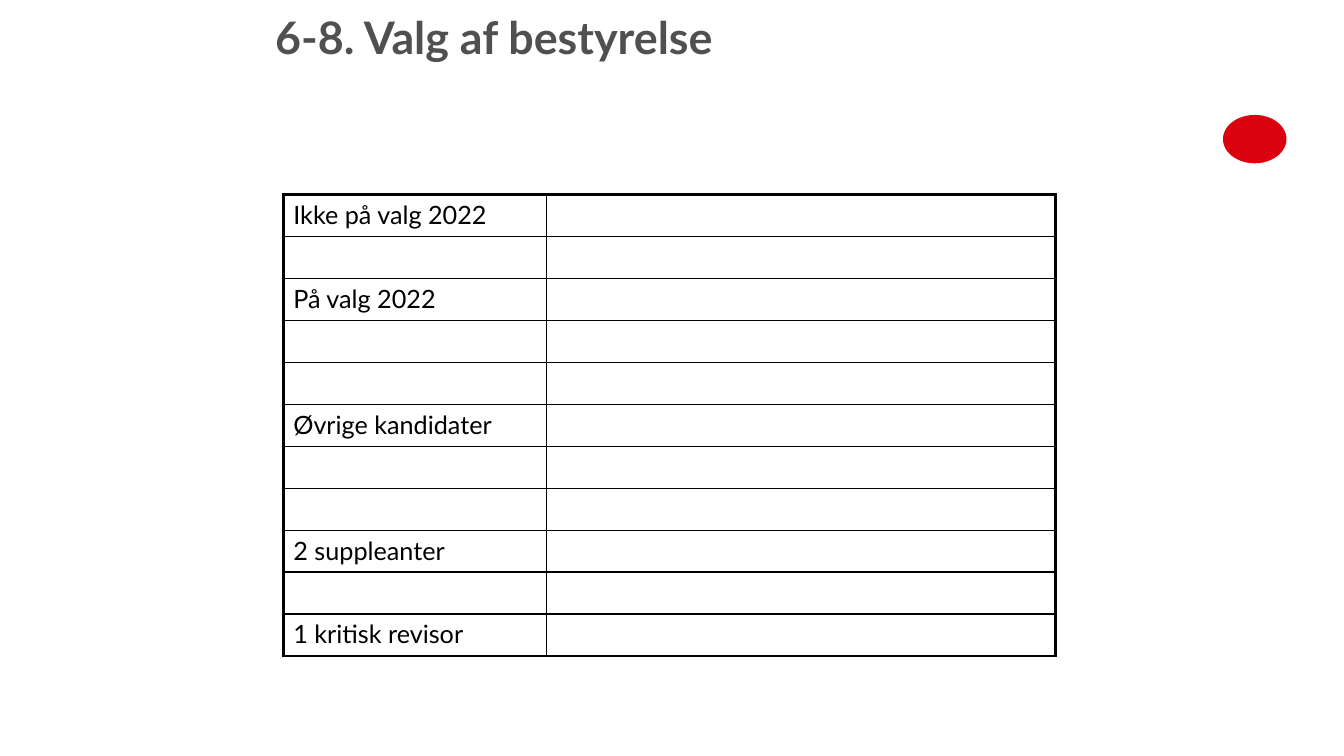
from lxml.etree import SubElement
from pptx import Presentation
from pptx.dml.color import RGBColor
from pptx.enum.shapes import MSO_SHAPE
from pptx.enum.text import MSO_ANCHOR
from pptx.oxml.ns import qn
from pptx.util import Inches, Pt

TITLE = "6-8. Valg af bestyrelse"
ROW_LABELS = [
    "Ikke på valg 2022", "",
    "På valg 2022", "", "",
    "Øvrige kandidater", "", "",
    "2 suppleanter", "",
    "1 kritisk revisor",
]
COLUMN_WIDTHS = [2.61, 5.05]
TABLE_LEFT, TABLE_TOP, TABLE_HEIGHT = 2.81, 1.93, 4.58

FONT = "Lato"
BLACK = RGBColor(0x00, 0x00, 0x00)
GRAY = RGBColor(0x50, 0x50, 0x50)
RED = RGBColor(0xDA, 0x02, 0x0E)
OUTER_LINE, INNER_LINE = Pt(2.25), Pt(1)


def style_run(run, size, color, bold=False):
    run.font.name = FONT
    run.font.size = Pt(size)
    run.font.bold = bold
    run.font.color.rgb = color


def add_border(cell, side, width):
    """Draw one side of a cell: L, R, T or B."""
    properties = cell._tc.get_or_add_tcPr()
    line = SubElement(properties, qn(f"a:ln{side}"), w=str(width))
    fill = SubElement(line, qn("a:solidFill"))
    SubElement(fill, qn("a:srgbClr"), val=str(BLACK))


def add_title(page):
    box = page.shapes.add_textbox(Inches(2.73), 0, Inches(8.5), Inches(0.63))
    frame = box.text_frame
    frame.word_wrap = True
    frame.vertical_anchor = MSO_ANCHOR.BOTTOM
    frame.margin_left = frame.margin_right = 0
    frame.margin_top = frame.margin_bottom = 0
    para = frame.paragraphs[0]
    para.text = TITLE
    para.line_spacing = Pt(36)
    style_run(para.runs[0], 32, GRAY, bold=True)


def add_emblem(page):
    emblem = page.shapes.add_shape(
        MSO_SHAPE.OVAL, Inches(12.13), Inches(1.14), Inches(0.63), Inches(0.48))
    emblem.shadow.inherit = False
    emblem.fill.solid()
    emblem.fill.fore_color.rgb = RED
    emblem.line.fill.background()


def add_election_table(page):
    row_count, column_count = len(ROW_LABELS), len(COLUMN_WIDTHS)
    table = page.shapes.add_table(
        row_count, column_count, Inches(TABLE_LEFT), Inches(TABLE_TOP),
        Inches(sum(COLUMN_WIDTHS)), Inches(TABLE_HEIGHT)).table
    table.first_row = False
    table.horz_banding = False
    for column, width in zip(table.columns, COLUMN_WIDTHS):
        column.width = Inches(width)

    for row_index, label in enumerate(ROW_LABELS):
        for column_index in range(column_count):
            cell = table.cell(row_index, column_index)
            outer_sides = {
                "L": column_index == 0,
                "R": column_index == column_count - 1,
                "T": row_index == 0,
                "B": row_index == row_count - 1,
            }
            for side, is_outer in outer_sides.items():
                add_border(cell, side, OUTER_LINE if is_outer else INNER_LINE)
            cell.fill.background()
        if label:
            para = table.cell(row_index, 0).text_frame.paragraphs[0]
            para.text = label
            style_run(para.runs[0], 18, BLACK)


def main():
    deck = Presentation()
    deck.slide_width, deck.slide_height = Inches(13.33), Inches(7.5)
    page = deck.slides.add_slide(deck.slide_layouts[6])
    add_emblem(page)
    add_title(page)
    add_election_table(page)
    deck.save("out.pptx")


if __name__ == "__main__":
    main()
